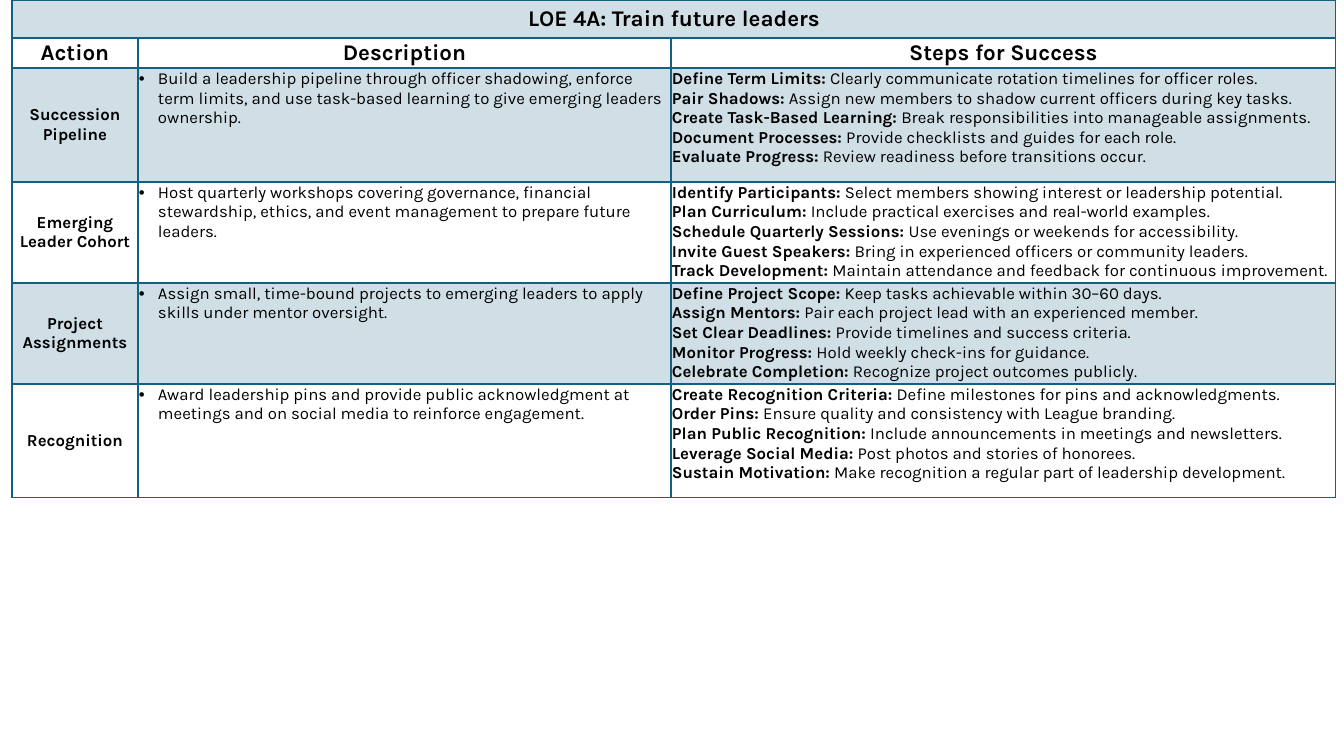
from lxml.etree import SubElement
from pptx import Presentation
from pptx.dml.color import RGBColor
from pptx.enum.text import MSO_ANCHOR as Anchor, PP_ALIGN as Align
from pptx.oxml.ns import qn
from pptx.util import Pt

PX = 914400 / 100.8
BLUE = RGBColor(0x15, 0x60, 0x82)
BLACK = RGBColor(0, 0, 0)
FONT = "Karla"
BULLET_INDENT = 19

COLUMN_WIDTHS = [126, 533, 665]
ROW_HEIGHTS = [38, 30, 114, 101, 101, 114]
TITLE = "LOE 4A: Train future leaders"
HEADINGS = ["Action", "Description", "Steps for Success"]
ACTIONS = [
    ("Succession Pipeline",
     "Build a leadership pipeline through officer shadowing, enforce term limits, "
     "and use task-based learning to give emerging leaders ownership.",
     [("Define Term Limits:", "Clearly communicate rotation timelines for officer roles."),
      ("Pair Shadows:", "Assign new members to shadow current officers during key tasks."),
      ("Create Task-Based Learning:", "Break responsibilities into manageable assignments."),
      ("Document Processes:", "Provide checklists and guides for each role."),
      ("Evaluate Progress:", "Review readiness before transitions occur.")]),
    ("Emerging Leader Cohort",
     "Host quarterly workshops covering governance, financial stewardship, ethics, "
     "and event management to prepare future leaders.",
     [("Identify Participants:", "Select members showing interest or leadership potential."),
      ("Plan Curriculum:", "Include practical exercises and real-world examples."),
      ("Schedule Quarterly Sessions:", "Use evenings or weekends for accessibility."),
      ("Invite Guest Speakers:", "Bring in experienced officers or community leaders."),
      ("Track Development:",
       "Maintain attendance and feedback for continuous improvement.")]),
    ("Project Assignments",
     "Assign small, time-bound projects to emerging leaders to apply skills "
     "under mentor oversight.",
     [("Define Project Scope:", "Keep tasks achievable within 30–60 days."),
      ("Assign Mentors:", "Pair each project lead with an experienced member."),
      ("Set Clear Deadlines:", "Provide timelines and success criteria."),
      ("Monitor Progress:", "Hold weekly check-ins for guidance."),
      ("Celebrate Completion:", "Recognize project outcomes publicly.")]),
    ("Recognition",
     "Award leadership pins and provide public acknowledgment at meetings "
     "and on social media to reinforce engagement.",
     [("Create Recognition Criteria:", "Define milestones for pins and acknowledgments."),
      ("Order Pins:", "Ensure quality and consistency with League branding."),
      ("Plan Public Recognition:", "Include announcements in meetings and newsletters."),
      ("Leverage Social Media:", "Post photos and stories of honorees."),
      ("Sustain Motivation:",
       "Make recognition a regular part of leadership development.")]),
]


def px(length):
    return round(length * PX)


def write(paragraph, text, size=12, bold=None, align=Align.LEFT):
    paragraph.text = text
    paragraph.alignment = align
    font = paragraph.font
    font.name, font.size, font.bold = FONT, Pt(size), bold
    font.color.rgb = BLACK


presentation = Presentation()
presentation.slide_width, presentation.slide_height = px(1344), px(756)
slide = presentation.slides.add_slide(presentation.slide_layouts[6])

# Table grid
table = slide.shapes.add_table(
    len(ROW_HEIGHTS), len(COLUMN_WIDTHS), px(12), 0,
    px(sum(COLUMN_WIDTHS)), px(sum(ROW_HEIGHTS))).table
table.first_row = table.horz_banding = False
for column, width in zip(table.columns, COLUMN_WIDTHS):
    column.width = px(width)
for row, height in zip(table.rows, ROW_HEIGHTS):
    row.height = px(height)

# Borders, margins and alternating tint
for row_index, row in enumerate(table.rows):
    for column_index, cell in enumerate(row.cells):
        cell.margin_left = cell.margin_right = px(1)
        cell.margin_top = cell.margin_bottom = px(1)
        centred = row_index < 2 or column_index == 0
        cell.vertical_anchor = Anchor.MIDDLE if centred else Anchor.TOP
        properties = cell._tc.get_or_add_tcPr()
        for side in ("lnL", "lnR", "lnT", "lnB"):
            line = SubElement(properties, qn(f"a:{side}"), w=str(Pt(1)))
            line_fill = SubElement(line, qn("a:solidFill"))
            SubElement(line_fill, qn("a:srgbClr"), val=str(BLUE))
        if row_index % 2 == 0:
            cell.fill.solid()
            cell.fill.fore_color.rgb = BLUE
            tint = properties.find(qn("a:solidFill")).find(qn("a:srgbClr"))
            SubElement(tint, qn("a:alpha"), val="20000")
        else:
            cell.fill.background()

# Title and headings
table.cell(0, 0).merge(table.cell(0, 2))
write(table.cell(0, 0).text_frame.paragraphs[0], TITLE, 16, True, Align.CENTER)
for column_index, heading in enumerate(HEADINGS):
    paragraph = table.cell(1, column_index).text_frame.paragraphs[0]
    write(paragraph, heading, 16, True, Align.CENTER)

# Actions
for row_index, (action, description, steps) in enumerate(ACTIONS, start=2):
    action_frame, description_frame, steps_frame = (
        cell.text_frame for cell in table.rows[row_index].cells)
    write(action_frame.paragraphs[0], action, bold=True, align=Align.CENTER)

    paragraph = description_frame.paragraphs[0]
    bullet = paragraph._p.get_or_add_pPr()
    bullet.set("marL", str(px(BULLET_INDENT)))
    bullet.set("indent", str(-px(BULLET_INDENT)))
    SubElement(bullet, qn("a:buFont"), typeface="Arial")
    SubElement(bullet, qn("a:buChar"), char="•")
    write(paragraph, description, bold=False)

    for step_index, (label, detail) in enumerate(steps):
        paragraph = (steps_frame.add_paragraph() if step_index
                     else steps_frame.paragraphs[0])
        write(paragraph, label)
        paragraph.runs[0].font.bold = True
        detail_run = paragraph.add_run()
        detail_run.text = f" {detail}"
        detail_run.font.bold = False

presentation.save("out.pptx")
